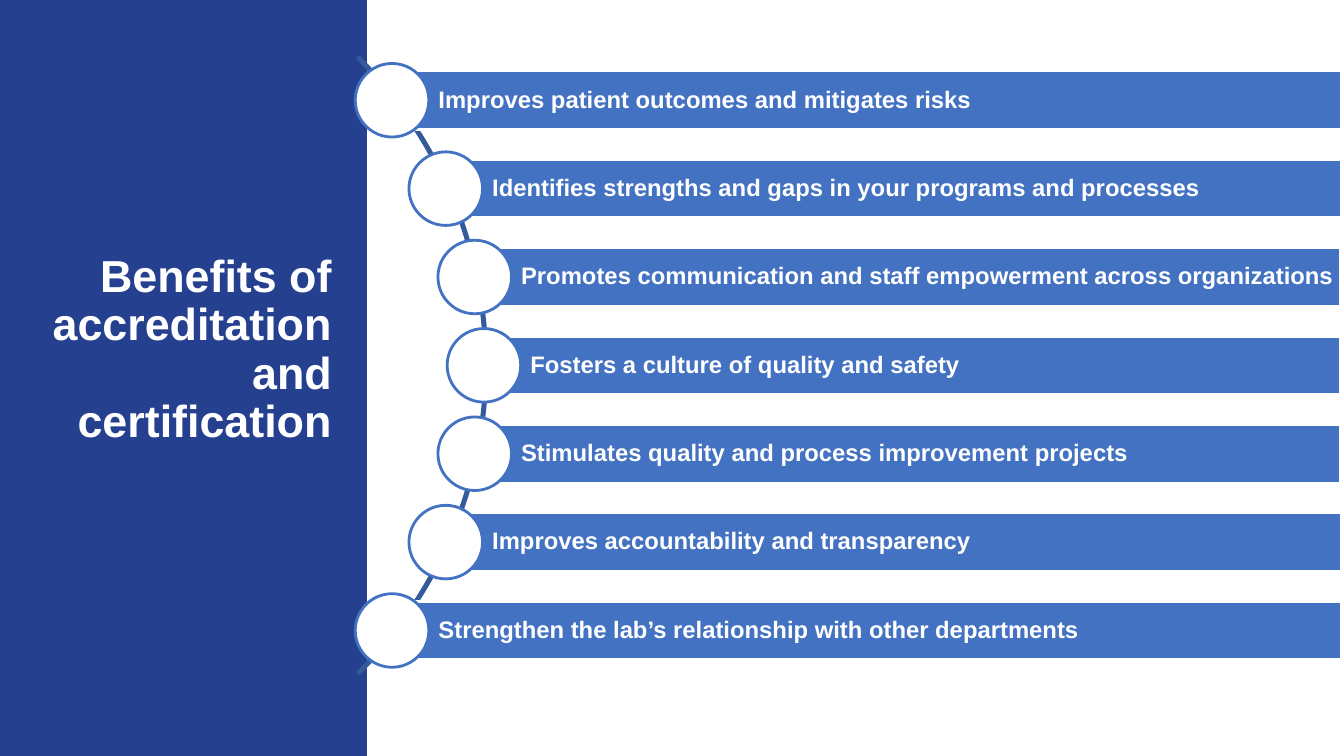
from math import sqrt

from pptx import Presentation
from pptx.dml.color import RGBColor
from pptx.enum.shapes import MSO_SHAPE
from pptx.enum.text import MSO_ANCHOR, PP_ALIGN
from pptx.util import Inches, Pt

RECTANGLE = MSO_SHAPE.RECTANGLE
OVAL = MSO_SHAPE.OVAL
BLOCK_ARC = MSO_SHAPE.BLOCK_ARC
MIDDLE = MSO_ANCHOR.MIDDLE
LEFT = PP_ALIGN.LEFT
RIGHT = PP_ALIGN.RIGHT

NAVY = "25408F"
BLUE = "4372C3"
ARC_BLUE = "345A99"
WHITE = "FFFFFF"

TITLE = "Benefits of accreditation and certification"
BENEFITS = [
    "Improves patient outcomes and mitigates risks",
    "Identifies strengths and gaps in your programs and processes",
    "Promotes communication and staff empowerment across organizations",
    "Fosters a culture of quality and safety",
    "Stimulates quality and process improvement projects",
    "Improves accountability and transparency",
    "Strengthen the lab’s relationship with other departments",
]


def color(hex_value):
    return RGBColor.from_string(hex_value)


def add_figure(slide, preset, left, top, width, height, fill=None, line=None):
    figure = slide.shapes.add_shape(
        preset, Inches(left), Inches(top), Inches(width), Inches(height))
    figure.shadow.inherit = False
    if fill:
        figure.fill.solid()
        figure.fill.fore_color.rgb = color(fill)
    else:
        figure.fill.background()
    if line:
        figure.line.color.rgb = color(line)
        figure.line.width = Pt(2)
    else:
        figure.line.fill.background()
    return figure


def write(frame, text, size, align=LEFT, left_inset=0.1, right_inset=0.1):
    frame.word_wrap = True
    frame.vertical_anchor = MIDDLE
    frame.margin_left = Inches(left_inset)
    frame.margin_right = Inches(right_inset)
    frame.margin_top = frame.margin_bottom = Inches(0.05)
    paragraph = frame.paragraphs[0]
    paragraph.alignment = align
    paragraph.line_spacing = 0.9
    run = paragraph.add_run()
    run.text = text
    run.font.name = "Arial"
    run.font.size = Pt(size)
    run.font.bold = True
    run.font.color.rgb = color(WHITE)


def add_title_panel(slide, left, top, width, height):
    add_figure(slide, RECTANGLE, left, top, width, height, fill=NAVY)
    heading = slide.shapes.add_textbox(
        Inches(left + 0.25), Inches(top + 2.75), Inches(width - 0.5), Inches(1.45))
    write(heading.text_frame, TITLE, 32, align=RIGHT)


def add_benefit_curve(slide, left, top, width, height):
    bar_height, circle_size = 0.58, 0.73
    middle = top + height / 2
    right = left + width
    arc_size = 8.65
    arc = add_figure(slide, BLOCK_ARC, left - 7.35, middle - arc_size / 2,
                     arc_size, arc_size, line=ARC_BLUE)
    for index, value in enumerate((189, 27, 0.0025)):
        arc.adjustments[index] = value

    curve_center, curve_radius = left - 2.98, 4.25
    pitch = (height - circle_size) / (len(BENEFITS) - 1)
    for row, benefit in enumerate(BENEFITS):
        y = top + circle_size / 2 + row * pitch
        x = curve_center + sqrt(curve_radius ** 2 - (y - middle) ** 2)
        bar = add_figure(slide, RECTANGLE, x, y - bar_height / 2,
                         right - x, bar_height, fill=BLUE, line=WHITE)
        write(bar.text_frame, benefit, 17, left_inset=0.46, right_inset=0)
        add_figure(slide, OVAL, x - circle_size / 2, y - circle_size / 2,
                   circle_size, circle_size, fill=WHITE, line=BLUE)


def main():
    deck = Presentation()
    deck.slide_width = Inches(13.33)
    deck.slide_height = Inches(7.5)
    slide = deck.slides.add_slide(deck.slide_layouts[6])
    add_title_panel(slide, 0, 0, 3.64, 7.5)
    add_benefit_curve(slide, 3.53, 0.63, 9.77, 5.99)
    deck.save("out.pptx")


if __name__ == "__main__":
    main()
